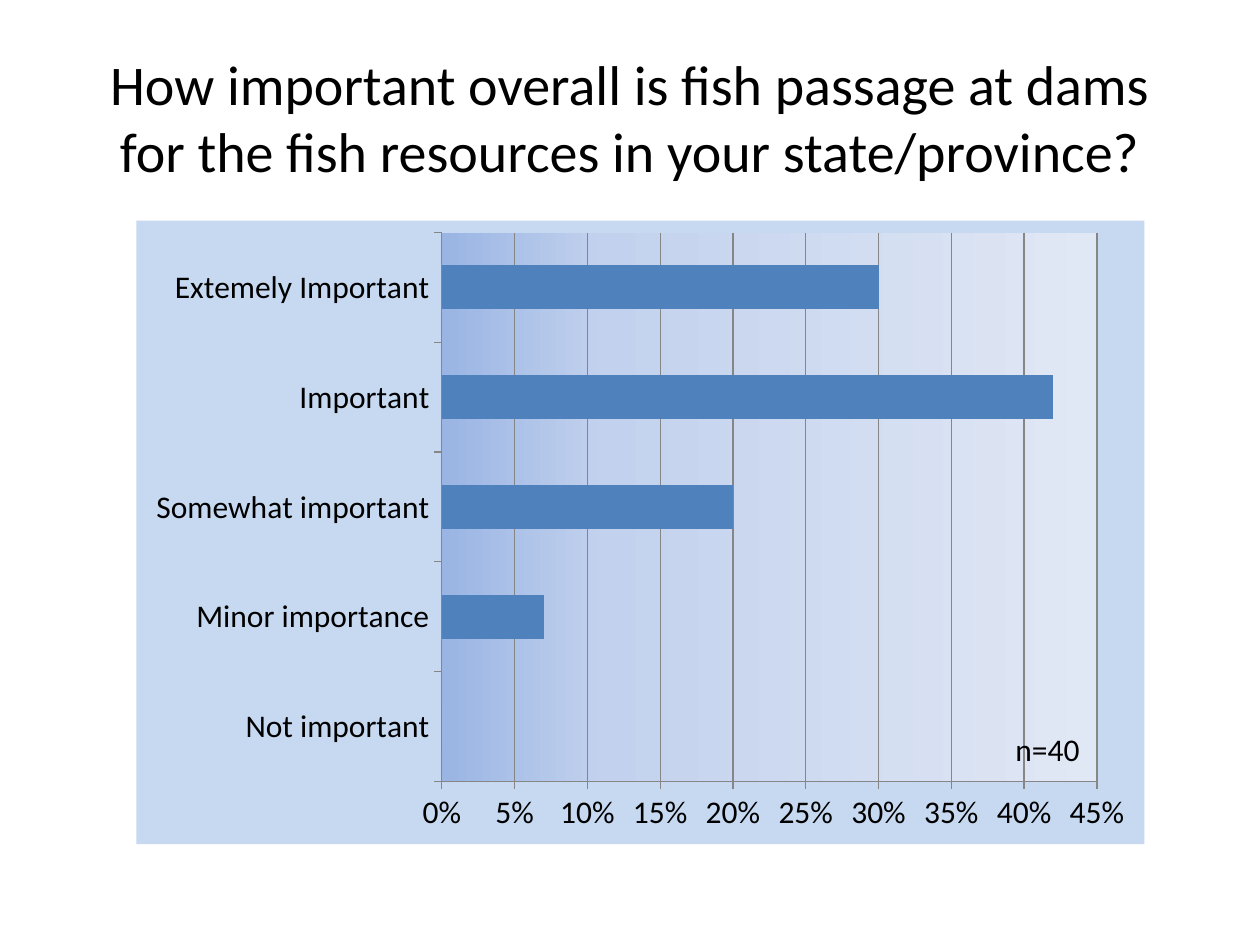
from pptx import Presentation
from pptx.chart.data import CategoryChartData
from pptx.dml.color import RGBColor
from pptx.enum.chart import XL_CHART_TYPE, XL_TICK_MARK
from pptx.enum.text import MSO_ANCHOR, MSO_AUTO_SIZE, PP_ALIGN
from pptx.oxml import parse_xml
from pptx.oxml.ns import nsdecls, qn
from pptx.util import Cm, Pt

FONT = "Calibri"
BLACK = "000000"
AXIS_GREY = "868686"
PANEL_FILL = '<a:solidFill><a:srgbClr val="C6D9F1"/></a:solidFill>'
PLOT_STOPS = [(0, "9AB5E4"), (25, "C2D1ED"), (100, "E1E8F5")]
PLOT_PERCENT = {"x": 30.3, "y": 1.9, "w": 65, "h": 88}
IMPORTANCE_SHARES = {
    "Not important": 0,
    "Minor importance": 0.07,
    "Somewhat important": 0.2,
    "Important": 0.42,
    "Extemely Important": 0.3,
}


def color(value):
    """Return the colour for a hex string."""
    return RGBColor.from_string(value)


def set_font(font, size):
    """Apply the slide's typeface and text colour at the given size."""
    font.name = FONT
    font.size = Pt(size)
    font.color.rgb = color(BLACK)


def area_format(fill):
    """Return a borderless chart area format with the given fill."""
    return parse_xml(
        f'<c:spPr {nsdecls("c", "a")}>{fill}<a:ln><a:noFill/></a:ln></c:spPr>'
    )


def gradient(stops):
    """Return a left-to-right gradient fill."""
    marks = "".join(
        f'<a:gs pos="{percent * 1000}"><a:srgbClr val="{value}"/></a:gs>'
        for percent, value in stops
    )
    return f'<a:gradFill><a:gsLst>{marks}</a:gsLst><a:lin ang="0" scaled="0"/></a:gradFill>'


def plot_layout(area):
    """Return a manual layout for the inner plot area, given in percent."""
    modes = "".join(f'<c:{side}Mode val="edge"/>' for side in "xy")
    sizes = "".join(
        f'<c:{side} val="{percent / 100:.3f}"/>' for side, percent in area.items()
    )
    return parse_xml(
        f'<c:layout {nsdecls("c")}><c:manualLayout><c:layoutTarget val="inner"/>'
        f"{modes}{sizes}</c:manualLayout></c:layout>"
    )


def format_areas(chart):
    """Fill the chart panel and plot area and place the plot."""
    chart_body = chart.element.find(qn("c:chart"))
    chart_body.addnext(area_format(PANEL_FILL))
    plot_area = chart_body.find(qn("c:plotArea"))
    for layout in plot_area.findall(qn("c:layout")):
        plot_area.remove(layout)
    plot_area.insert(0, plot_layout(PLOT_PERCENT))
    plot_area.append(area_format(gradient(PLOT_STOPS)))


def format_line(line):
    """Draw an axis or grid line in thin grey."""
    line.color.rgb = color(AXIS_GREY)
    line.width = Pt(0.75)


def add_title(slide, question):
    """Place the question in the title placeholder."""
    title = slide.shapes.title
    title.left, title.top = Cm(1.27), Cm(0.76)
    title.width, title.height = Cm(22.86), Cm(3.18)
    frame = title.text_frame
    frame.text = question
    frame.word_wrap = True
    frame.auto_size = MSO_AUTO_SIZE.NONE
    frame.vertical_anchor = MSO_ANCHOR.MIDDLE
    paragraph = frame.paragraphs[0]
    paragraph.alignment = PP_ALIGN.CENTER
    set_font(paragraph.font, 32)


def add_importance_chart(slide):
    """Add the bar chart of response shares."""
    shares = CategoryChartData(number_format="0%")
    shares.categories = list(IMPORTANCE_SHARES)
    shares.add_series("Series 1", list(IMPORTANCE_SHARES.values()))
    chart = slide.shapes.add_chart(
        XL_CHART_TYPE.BAR_CLUSTERED, Cm(2.75), Cm(4.45), Cm(20.32), Cm(12.57), shares
    ).chart
    chart.has_title = False
    chart.has_legend = False
    set_font(chart.font, 18)
    format_areas(chart)

    for axis in (chart.category_axis, chart.value_axis):
        axis.major_tick_mark = XL_TICK_MARK.OUTSIDE
        axis.minor_tick_mark = XL_TICK_MARK.NONE
        format_line(axis.format.line)
    share_axis = chart.value_axis
    share_axis.minimum_scale, share_axis.maximum_scale = 0, 0.45
    share_axis.major_unit = 0.05
    share_axis.tick_labels.number_format = "0%"
    share_axis.tick_labels.number_format_is_linked = False
    share_axis.has_major_gridlines = True
    format_line(share_axis.major_gridlines.format.line)

    bars = chart.plots[0]
    bars.gap_width = 150
    bars.vary_by_categories = False
    bar_fill = bars.series[0].format.fill
    bar_fill.solid()
    bar_fill.fore_color.rgb = color("4F81BD")


def add_sample_size(slide):
    """Note the number of respondents in the plot's corner."""
    note = slide.shapes.add_textbox(Cm(20.22), Cm(14.6), Cm(1.9), Cm(1.02))
    frame = note.text_frame
    frame.text = "n=40"
    frame.word_wrap = False
    frame.auto_size = MSO_AUTO_SIZE.SHAPE_TO_FIT_TEXT
    set_font(frame.paragraphs[0].font, 18)


def main():
    """Build and save the survey slide."""
    deck = Presentation()
    deck.slide_width, deck.slide_height = Cm(25.4), Cm(19.05)
    slide = deck.slides.add_slide(deck.slide_layouts[5])
    add_title(
        slide,
        "How important overall is fish passage at dams for the fish resources "
        "in your state/province?",
    )
    add_importance_chart(slide)
    add_sample_size(slide)
    deck.save("out.pptx")


if __name__ == "__main__":
    main()
